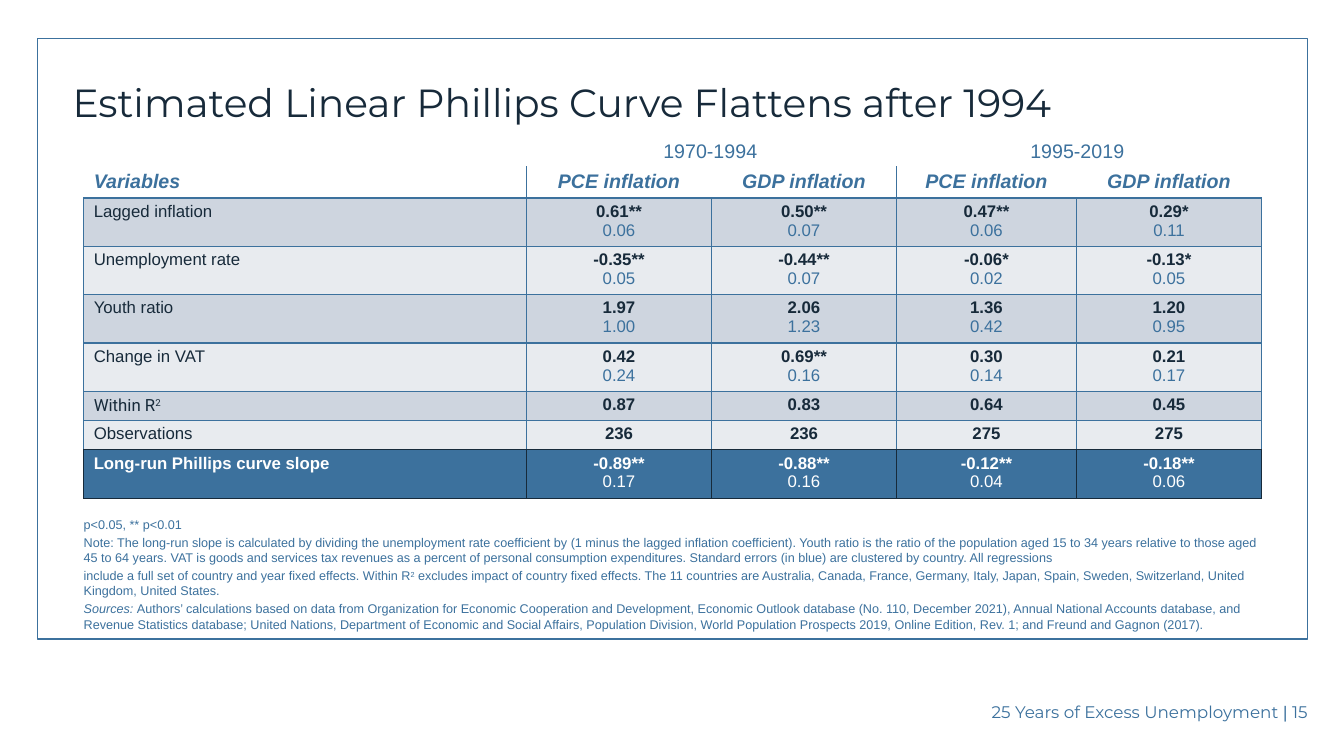
from lxml import etree
from pptx import Presentation
from pptx.dml.color import RGBColor
from pptx.enum.shapes import MSO_SHAPE
from pptx.enum.text import MSO_ANCHOR, PP_ALIGN
from pptx.oxml.ns import qn
from pptx.util import Inches, Pt

RECTANGLE = MSO_SHAPE.RECTANGLE
TOP, BOTTOM = MSO_ANCHOR.TOP, MSO_ANCHOR.BOTTOM
LEFT, CENTER, RIGHT = PP_ALIGN.LEFT, PP_ALIGN.CENTER, PP_ALIGN.RIGHT

BLUE, NAVY, WHITE = "3C719D", "172A3A", "FFFFFF"
BANDS = ["CED5DF", "E8EBEF"]

COL_WIDTHS = [4.39, 1.84, 1.83, 1.79, 1.83]
HEADER_HEIGHT, SINGLE_HEIGHT, DOUBLE_HEIGHT = 0.31, 0.29, 0.475
HEADERS = ["Variables"] + ["PCE inflation", "GDP inflation"] * 2
ROWS = [
    ("Lagged inflation", ["0.61**", "0.50**", "0.47**", "0.29*"], ["0.06", "0.07", "0.06", "0.11"]),
    ("Unemployment rate", ["-0.35**", "-0.44**", "-0.06*", "-0.13*"], ["0.05", "0.07", "0.02", "0.05"]),
    ("Youth ratio", ["1.97", "2.06", "1.36", "1.20"], ["1.00", "1.23", "0.42", "0.95"]),
    ("Change in VAT", ["0.42", "0.69**", "0.30", "0.21"], ["0.24", "0.16", "0.14", "0.17"]),
    ("Within R", ["0.87", "0.83", "0.64", "0.45"], []),
    ("Observations", ["236", "236", "275", "275"], []),
    ("Long-run Phillips curve slope", ["-0.89**", "-0.88**", "-0.12**", "-0.18**"],
     ["0.17", "0.16", "0.04", "0.06"]),
]
NOTES = [
    [("p<0.05, ** p<0.01", {})],
    [("Note: The long-run slope is calculated by dividing the unemployment rate coefficient by "
      "(1 minus the lagged inflation coefficient). Youth ratio is the ratio of the population aged "
      "15 to 34 years relative to those aged 45 to 64 years. VAT is goods and services tax revenues "
      "as a percent of personal consumption expenditures. Standard errors (in blue) are clustered "
      "by country. All regressions", {})],
    [("include a full set of country and year fixed effects. Within R", {}),
     ("2", {"raised": True}),
     (" excludes impact of country fixed effects. The 11 countries are Australia, Canada, France, "
      "Germany, Italy, Japan, Spain, Sweden, Switzerland, United Kingdom, United States.", {})],
    [("Sources: ", {"italic": True}),
     ("Authors’ calculations based on data from Organization for Economic Cooperation and "
      "Development, Economic Outlook database (No. 110, December 2021), Annual National Accounts "
      "database, and Revenue Statistics database; United Nations, Department of Economic and Social "
      "Affairs, Population Division, World Population Prospects 2019, Online Edition, Rev. 1; and "
      "Freund and Gagnon (2017).", {})],
]


def rgb(value):
    return RGBColor.from_string(value)


def add_run(p, text, size, color, font="Arial", bold=False, italic=False, raised=False):
    r = p.add_run()
    r.text = text
    r.font.name = font
    r.font.size = Pt(size)
    r.font.color.rgb = rgb(color)
    r.font.bold = bold
    r.font.italic = italic
    if raised:
        r.font._element.set("baseline", "30000")


def add_text(slide, left, top, width, height, anchor=TOP, align=LEFT, line_spacing=1.0):
    sp = slide.shapes.add_textbox(Inches(left), Inches(top), Inches(width), Inches(height))
    tf = sp.text_frame
    tf.word_wrap = True
    tf.vertical_anchor = anchor
    tf.margin_left = tf.margin_right = tf.margin_top = tf.margin_bottom = 0
    p = tf.paragraphs[0]
    p.alignment = align
    p.line_spacing = line_spacing
    return tf


def add_frame(slide):
    sp = slide.shapes.add_shape(RECTANGLE, Inches(0.37), Inches(0.38), Inches(12.6), Inches(5.96))
    sp.shadow.inherit = False
    sp.fill.background()
    sp.line.color.rgb = rgb(BLUE)
    sp.line.width = Pt(1)


def add_notes_text(slide):
    tf = add_text(slide, 0.83, 5.13, 11.68, 1.15)
    for i, runs in enumerate(NOTES):
        p = tf.add_paragraph() if i else tf.paragraphs[0]
        if i:
            p.space_before = Pt(2)
        for text, style in runs:
            add_run(p, text, 9, BLUE, **style)


def set_borders(cell, colors):
    tc_pr = cell._tc.get_or_add_tcPr()
    for i, side in enumerate("LRTB"):
        ln = etree.Element(qn("a:ln" + side), w=str(Pt(1)))
        if side in colors:
            fill = etree.SubElement(ln, qn("a:solidFill"))
            etree.SubElement(fill, qn("a:srgbClr"), val=colors[side])
        else:
            etree.SubElement(ln, qn("a:noFill"))
        tc_pr.insert(i, ln)


def style_cell(cell, col, fill, borders):
    cell.margin_left = cell.margin_right = Inches(0.1)
    cell.margin_top = cell.margin_bottom = Inches(0.04)
    if fill:
        cell.fill.solid()
        cell.fill.fore_color.rgb = rgb(fill)
    else:
        cell.fill.background()
    set_borders(cell, borders)
    p = cell.text_frame.paragraphs[0]
    p.alignment = CENTER if col else LEFT
    return p


def fill_header(table):
    for col, text in enumerate(HEADERS):
        borders = {"B": BLUE}
        if col in (0, 2):
            borders["R"] = BLUE
        if col in (1, 3):
            borders["L"] = BLUE
        p = style_cell(table.cell(0, col), col, None, borders)
        add_run(p, text, 14, BLUE, bold=True, italic=True)


def fill_row(table, row, label, estimates, errors):
    last = row == len(ROWS)
    fill = BLUE if last else BANDS[(row - 1) % 2]
    text_color, error_color = (WHITE, WHITE) if last else (NAVY, BLUE)
    borders = dict.fromkeys("LRTB", NAVY if last else BLUE)
    if row == len(ROWS) - 1:
        borders["B"] = NAVY
    p = style_cell(table.cell(row, 0), 0, fill, borders)
    squared = label == "Within R"
    font = "Roboto" if squared else "Arial"
    add_run(p, label, 12, text_color, font=font, bold=last)
    if squared:
        add_run(p, "2", 12, text_color, font=font, raised=True)
    for col, estimate in enumerate(estimates, 1):
        cell = table.cell(row, col)
        p = style_cell(cell, col, fill, borders)
        add_run(p, estimate, 12, text_color, bold=True)
        if errors:
            p = cell.text_frame.add_paragraph()
            p.alignment = CENTER
            add_run(p, errors[col - 1], 12, error_color)


def add_results_table(slide):
    heights = [HEADER_HEIGHT] + [DOUBLE_HEIGHT if errors else SINGLE_HEIGHT for _, _, errors in ROWS]
    frame = slide.shapes.add_table(len(heights), len(COL_WIDTHS), Inches(0.83), Inches(1.65),
                                   Inches(sum(COL_WIDTHS)), Inches(sum(heights)))
    table = frame.table
    table.first_row = table.horz_banding = False
    for column, width in zip(table.columns, COL_WIDTHS):
        column.width = Inches(width)
    for table_row, height in zip(table.rows, heights):
        table_row.height = Inches(height)
    fill_header(table)
    for row, content in enumerate(ROWS, 1):
        fill_row(table, row, *content)


def main():
    prs = Presentation()
    prs.slide_width, prs.slide_height = Inches(13.33), Inches(7.5)
    slide = prs.slides.add_slide(prs.slide_layouts[6])
    add_frame(slide)
    title = add_text(slide, 0.72, 0.77, 11.84, 0.48, anchor=BOTTOM, line_spacing=0.9)
    add_run(title.paragraphs[0], "Estimated Linear Phillips Curve Flattens after 1994",
            28, NAVY, font="Montserrat")
    footer = add_text(slide, 6.67, 6.79, 6.3, 0.39, anchor=BOTTOM, align=RIGHT).paragraphs[0]
    add_run(footer, " ", 20, BLUE, font="Montserrat")
    add_run(footer, "25 Years of Excess Unemployment ", 12, BLUE, font="Montserrat")
    add_run(footer, "| ", 12, BLUE)
    add_run(footer, "15", 12, BLUE, font="Montserrat")
    add_notes_text(slide)
    add_results_table(slide)
    for period, left, width in [("1970-1994", 5.2, 3.69), ("1995-2019", 8.86, 3.65)]:
        tf = add_text(slide, left, 1.4, width, 0.26, align=CENTER, line_spacing=0.9)
        add_run(tf.paragraphs[0], period, 14, BLUE)
    prs.save("out.pptx")


if __name__ == "__main__":
    main()
